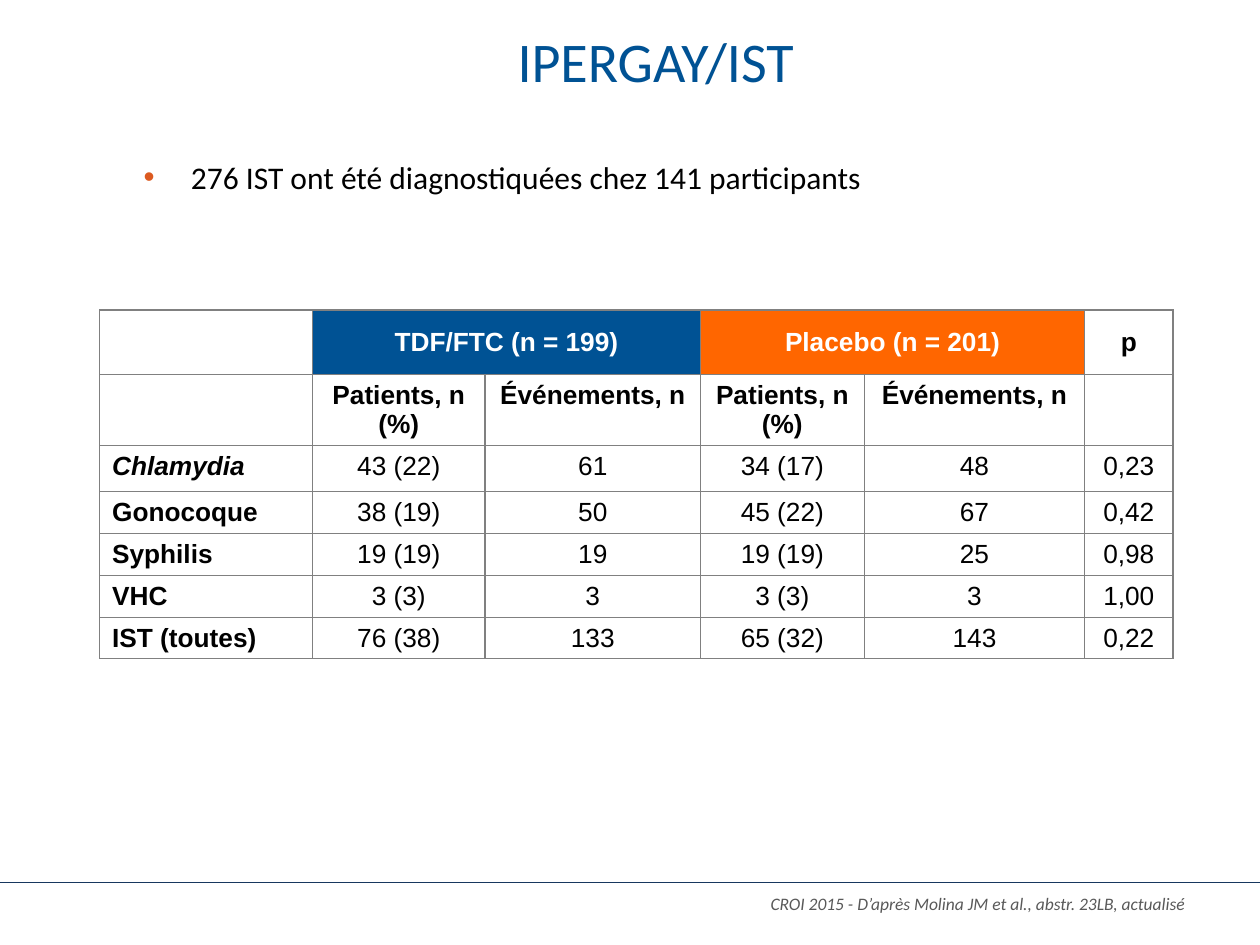
"""Build the slide on sexually transmitted infections in the IPERGAY trial."""
from lxml.etree import SubElement
from pptx import Presentation
from pptx.dml.color import RGBColor
from pptx.enum.shapes import MSO_CONNECTOR
from pptx.enum.text import MSO_ANCHOR, MSO_AUTO_SIZE, PP_ALIGN
from pptx.oxml.ns import qn
from pptx.util import Pt

TITLE = "IPERGAY/IST"
POINT = "276 IST ont été diagnostiquées chez 141 participants"
CREDIT = "CROI 2015 - D’après Molina JM et al., abstr. 23LB, actualisé"
ROWS = [
    ("", "TDF/FTC (n = 199)", "", "Placebo (n = 201)", "", "p"),
    ("", "Patients, n (%)", "Événements, n", "Patients, n (%)", "Événements, n", ""),
    ("Chlamydia", "43 (22)", "61", "34 (17)", "48", "0,23"),
    ("Gonocoque", "38 (19)", "50", "45 (22)", "67", "0,42"),
    ("Syphilis", "19 (19)", "19", "19 (19)", "25", "0,98"),
    ("VHC", "3 (3)", "3", "3 (3)", "3", "1,00"),
    ("IST (toutes)", "76 (38)", "133", "65 (32)", "143", "0,22"),
]
WIDTHS = [121.7, 98.6, 123.1, 93.6, 126, 50.4]
HEIGHTS = [36.7, 38.9, 26.6] + [23] * 4
ARMS = {1: "005294", 3: "FF6600"}


def color(code):
    return RGBColor.from_string(code)


def place(shape, left, top, width, height):
    shape.left, shape.top = Pt(left), Pt(top)
    shape.width, shape.height = Pt(width), Pt(height)


def write(frame, text, size, code, face="Calibri", align=PP_ALIGN.LEFT,
          bold=False, italic=False):
    frame.text = text
    para = frame.paragraphs[0]
    para.alignment = align
    font = para.runs[0].font if para.runs else para.font
    font.name, font.size = face, Pt(size)
    font.bold, font.italic = bold, italic
    font.color.rgb = color(code)
    return para


def clear(frame):
    frame.word_wrap = True
    frame.auto_size = MSO_AUTO_SIZE.NONE
    frame.margin_left = frame.margin_right = 0
    frame.margin_top = frame.margin_bottom = 0


def bullet(para, code, indent):
    props = para._p.get_or_add_pPr()
    props.set("marL", str(Pt(indent)))
    props.set("indent", str(-Pt(indent)))
    tint = SubElement(props, qn("a:buClr"))
    SubElement(tint, qn("a:srgbClr"), val=code)
    SubElement(props, qn("a:buFont"), typeface="Arial")
    SubElement(props, qn("a:buChar"), char="•")


def border(cell, code, width):
    props = cell._tc.get_or_add_tcPr()
    for spot, side in enumerate(("lnL", "lnR", "lnT", "lnB")):
        line = props.makeelement(qn("a:" + side), {"w": str(Pt(width))})
        fill = SubElement(line, qn("a:solidFill"))
        SubElement(fill, qn("a:srgbClr"), val=code)
        props.insert(spot, line)


def style(cell, text, row, col):
    head = row < 2
    arm = ARMS.get(col) if row == 0 else None
    write(cell.text_frame, text, 15, "FFFFFF" if arm else "000000", "Arial",
          PP_ALIGN.CENTER if col else PP_ALIGN.LEFT,
          head or col == 0, text == "Chlamydia")
    cell.vertical_anchor = MSO_ANCHOR.TOP if row else MSO_ANCHOR.MIDDLE
    if arm:
        cell.fill.solid()
        cell.fill.fore_color.rgb = color(arm)
    else:
        cell.fill.background()
    border(cell, "808080", 0.75)


def fill_table(slide):
    grid = slide.shapes.add_table(
        len(ROWS), len(WIDTHS), Pt(56.9), Pt(177.1),
        Pt(sum(WIDTHS)), Pt(sum(HEIGHTS))).table
    grid.first_row = grid.horz_banding = False
    for col, width in zip(grid.columns, WIDTHS):
        col.width = Pt(width)
    for row, height in zip(grid.rows, HEIGHTS):
        row.height = Pt(height)
    for row, texts in enumerate(ROWS):
        for col, text in enumerate(texts):
            style(grid.cell(row, col), text, row, col)
    for col in ARMS:
        grid.cell(0, col).merge(grid.cell(0, col + 1))


def main():
    deck = Presentation()
    deck.slide_width, deck.slide_height = Pt(720), Pt(540)
    slide = deck.slides.add_slide(deck.slide_layouts[1])

    rule = slide.shapes.add_connector(
        MSO_CONNECTOR.STRAIGHT, 0, Pt(504), Pt(721.4), Pt(504))
    rule.line.color.rgb = color("17375E")
    rule.line.width = Pt(0.25)
    SubElement(rule._element.spPr, qn("a:effectLst"))

    title, body = slide.shapes.title, slide.placeholders[1]
    place(title, 83.5, 18.7, 582.5, 47.5)
    clear(title.text_frame)
    title.text_frame.vertical_anchor = MSO_ANCHOR.MIDDLE
    para = write(title.text_frame, TITLE, 32, "005294", align=PP_ALIGN.CENTER)
    para.line_spacing = Pt(22)

    place(body, 82.1, 90, 601.9, 361.4)
    clear(body.text_frame)
    bullet(write(body.text_frame, POINT, 18, "000000"), "DC5A20", 27)

    fill_table(slide)

    note = slide.shapes.add_textbox(Pt(218.2), Pt(504), Pt(465.8), Pt(36.7))
    frame = note.text_frame
    frame.word_wrap = True
    frame.vertical_anchor = MSO_ANCHOR.MIDDLE
    frame.margin_bottom = Pt(16)
    write(frame, CREDIT, 10, "595959", align=PP_ALIGN.RIGHT, italic=True)

    deck.save("out.pptx")


if __name__ == "__main__":
    main()
